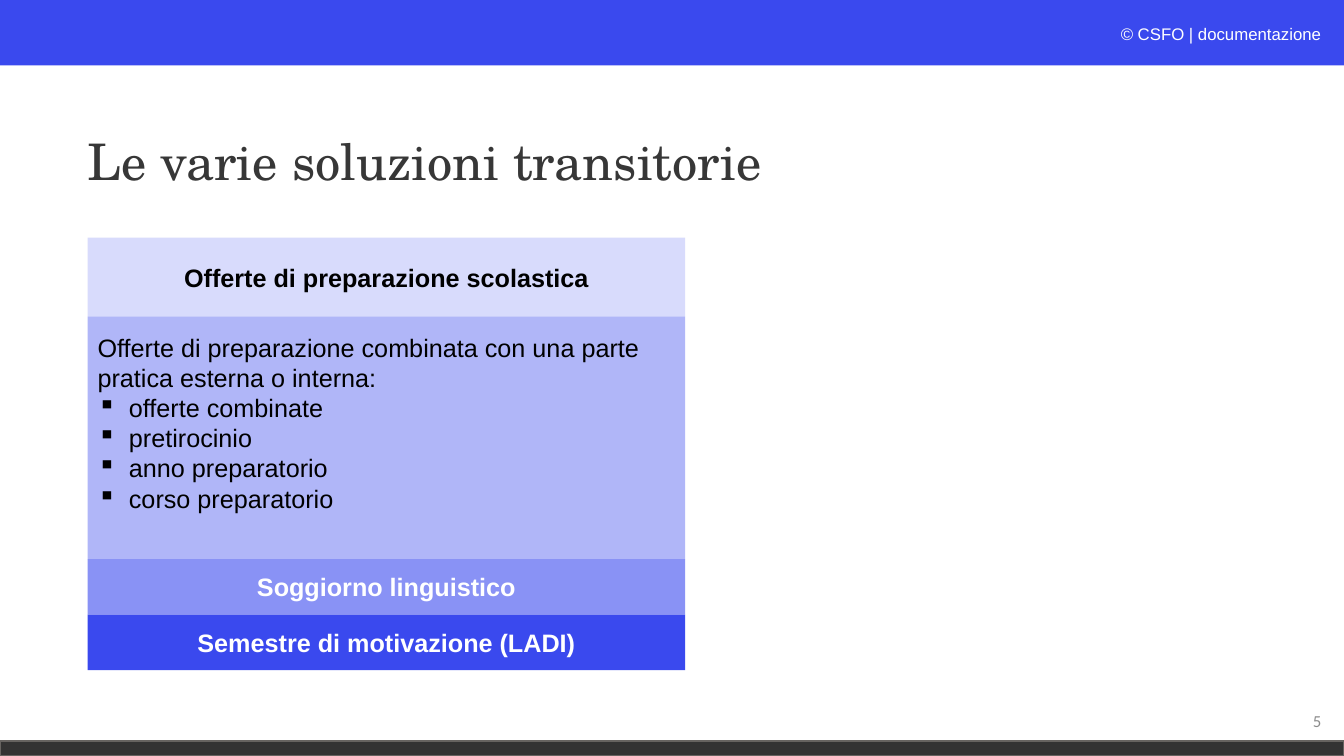
import pptx
import pptx.util
import pptx.dml.color
import pptx.enum.shapes
import pptx.enum.text
import pptx.oxml.ns
import lxml.etree

Cm = pptx.util.Cm
Pt = pptx.util.Pt
RGBColor = pptx.dml.color.RGBColor
ALIGN = pptx.enum.text.PP_ALIGN
ANCHOR = pptx.enum.text.MSO_ANCHOR

BLUE = RGBColor(0x3A, 0x49, 0xEE)
MEDIUM_BLUE = RGBColor(0x89, 0x92, 0xF5)
LIGHT_BLUE = RGBColor(0xB0, 0xB6, 0xF8)
PALE_BLUE = RGBColor(0xD8, 0xDB, 0xFC)
DARK = RGBColor(0x33, 0x33, 0x33)
EDGE = RGBColor(0x66, 0x63, 0x60)
TITLE_GRAY = RGBColor(0x37, 0x37, 0x37)
NUMBER_GRAY = RGBColor(0x8C, 0x8C, 0x8C)
OFF_WHITE = RGBColor(0xFC, 0xFD, 0xFE)
WHITE = RGBColor(0xFF, 0xFF, 0xFF)
BLACK = RGBColor(0x00, 0x00, 0x00)

deck = pptx.Presentation()
deck.slide_width = Cm(33.87)
deck.slide_height = Cm(19.05)
slide = deck.slides.add_slide(deck.slide_layouts[6])


def add_block(left, top, width, height, fill):
    block = slide.shapes.add_shape(
        pptx.enum.shapes.MSO_SHAPE.RECTANGLE,
        Cm(left), Cm(top), Cm(width), Cm(height))
    block.shadow.inherit = False
    block.fill.solid()
    block.fill.fore_color.rgb = fill
    block.line.fill.background()
    block.text_frame.word_wrap = True
    block.text_frame.vertical_anchor = ANCHOR.MIDDLE
    return block


def style(paragraph, size, face, color, align, bold=False):
    paragraph.alignment = align
    paragraph.font.size = Pt(size)
    paragraph.font.name = face
    paragraph.font.color.rgb = color
    paragraph.font.bold = bold


add_block(0, 0, 33.87, 1.65, BLUE)
footer = add_block(0, 18.67, 33.87, 0.38, DARK)
footer.line.color.rgb = EDGE
footer.line.width = Pt(1)

credit = slide.shapes.add_textbox(Cm(21.89), Cm(0.48), Cm(11.66), Cm(0.76)).text_frame
credit.word_wrap = True
credit_line = credit.paragraphs[0]
style(credit_line, 12, "Arial", WHITE, ALIGN.RIGHT)
symbol = credit_line.add_run()
symbol.text = "© "
symbol.font.italic = True
symbol.font.color.rgb = OFF_WHITE
credit_line.add_run().text = "CSFO | documentazione"

title = slide.shapes.add_textbox(Cm(1.96), Cm(2.31), Cm(22.4), Cm(3.68)).text_frame
title.word_wrap = True
title.vertical_anchor = ANCHOR.MIDDLE
title.text = "Le varie soluzioni transitorie"
title.paragraphs[0].line_spacing = 0.9
style(title.paragraphs[0], 36, "TeX Gyre Schola", TITLE_GRAY, ALIGN.LEFT)

page_number = slide.shapes.add_textbox(Cm(25.93), Cm(17.65), Cm(7.62), Cm(1.02)).text_frame
page_number.word_wrap = True
page_number.vertical_anchor = ANCHOR.MIDDLE
page_number.text = "5"
style(page_number.paragraphs[0], 12, "Calibri", NUMBER_GRAY, ALIGN.RIGHT)

combined_intro = [
    "Offerte di preparazione combinata con una parte",
    "pratica esterna o interna:",
]
combined_offers = [
    "offerte combinate",
    "pretirocinio",
    "anno preparatorio",
    "corso preparatorio",
]
solutions = [
    (1.98, PALE_BLUE, BLACK, ["Offerte di preparazione scolastica"]),
    (6.12, LIGHT_BLUE, BLACK, combined_intro + combined_offers),
    (1.4, MEDIUM_BLUE, WHITE, ["Soggiorno linguistico"]),
    (1.4, BLUE, WHITE, ["Semestre di motivazione (LADI)"]),
]

top = 5.99
for height, fill, color, lines in solutions:
    solution = add_block(2.21, top, 15.06, height, fill).text_frame
    solution.text = "\n".join(lines)
    is_heading = len(lines) == 1
    if not is_heading:
        solution.margin_bottom = Cm(0.89)
    for paragraph in solution.paragraphs:
        if paragraph.text in combined_offers:
            properties = paragraph._p.get_or_add_pPr()
            properties.set("marL", str(Cm(0.79)))
            properties.set("indent", str(-Cm(0.79)))
            bullet = lxml.etree.SubElement(properties, pptx.oxml.ns.qn("a:buChar"))
            bullet.set("char", "▪")
        style(paragraph, 18, "Arial", color,
              ALIGN.CENTER if is_heading else ALIGN.LEFT, is_heading)
    top += height

deck.save("out.pptx")
